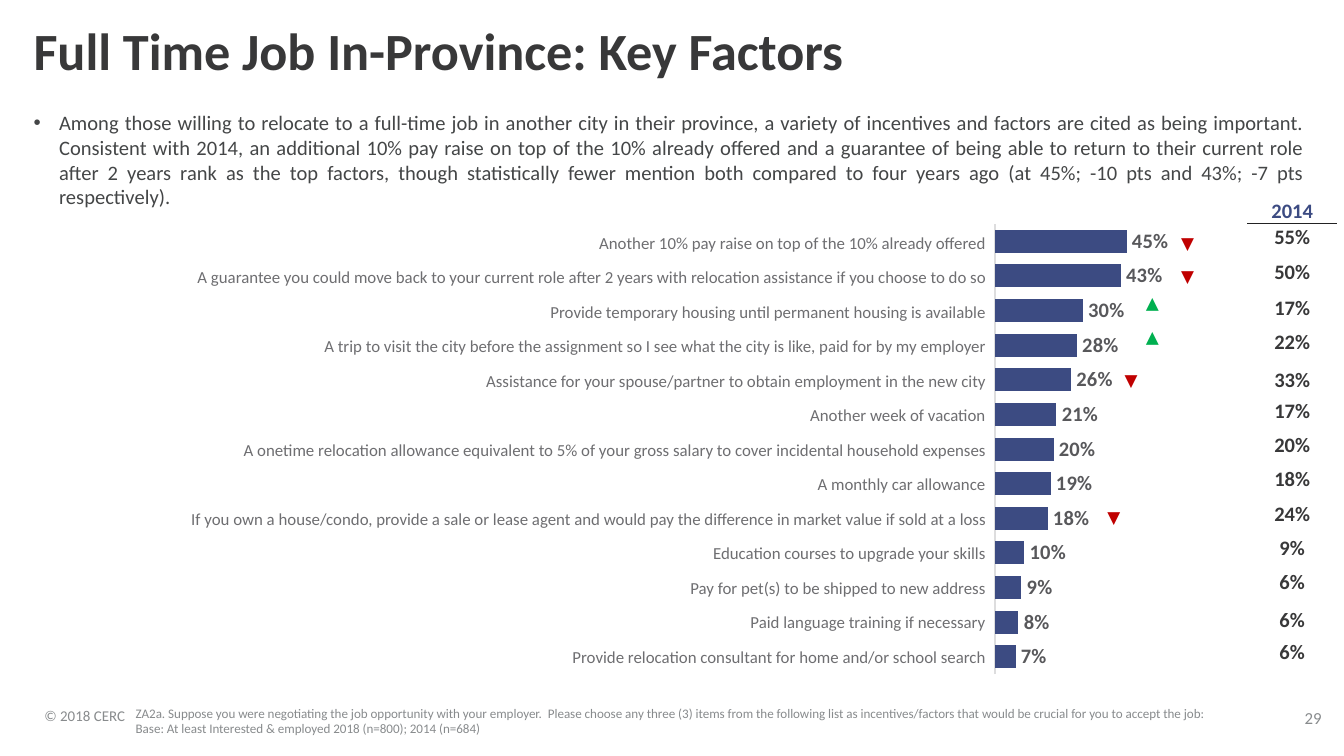
from lxml import etree
from pptx import Presentation
from pptx.chart.data import CategoryChartData
from pptx.dml.color import RGBColor
from pptx.enum.chart import XL_CHART_TYPE, XL_LABEL_POSITION, XL_TICK_LABEL_POSITION, XL_TICK_MARK
from pptx.enum.text import MSO_ANCHOR, PP_ALIGN
from pptx.oxml import parse_xml
from pptx.oxml.ns import nsdecls, qn
from pptx.util import Inches, Pt

FONT = "Calibri"
NAVY = RGBColor(0x3C, 0x4B, 0x82)
INK = RGBColor(0x38, 0x38, 0x39)
RULE = RGBColor(0x22, 0x22, 0x23)
BODY = RGBColor(0x44, 0x46, 0x47)
LABEL = RGBColor(0x6E, 0x6E, 0x71)
VALUE = RGBColor(0x58, 0x58, 0x5B)
FOOT = RGBColor(0x88, 0x8B, 0x8D)
AXIS = RGBColor(0xDD, 0xDD, 0xDE)
RED = RGBColor(0xC0, 0x00, 0x00)
GREEN = RGBColor(0x00, 0xB0, 0x50)
NO_STYLE = "{2D5ABB26-0587-4C30-8999-92F81FD0307C}"

# factor, share in 2018, share in 2014
FACTORS = [
    ("Another 10% pay raise on top of the 10% already offered", 0.45, "55%"),
    ("A guarantee you could move back to your current role after 2 years with relocation "
     "assistance if you choose to do so", 0.43, "50%"),
    ("Provide temporary housing until permanent housing is available", 0.30, "17%"),
    ("A trip to visit the city before the assignment so I see what the city is like, "
     "paid for by my employer", 0.28, "22%"),
    ("Assistance for your spouse/partner to obtain employment in the new city", 0.26, "33%"),
    ("Another week of vacation", 0.21, "17%"),
    ("A onetime relocation allowance equivalent to 5% of your gross salary to cover "
     "incidental household expenses", 0.20, "20%"),
    ("A monthly car allowance", 0.19, "18%"),
    ("If you own a house/condo, provide a sale or lease agent and would pay the difference "
     "in market value if sold at a loss", 0.18, "24%"),
    ("Education courses to upgrade your skills", 0.10, "9%"),
    ("Pay for pet(s) to be shipped to new address", 0.09, "6%"),
    ("Paid language training if necessary", 0.08, "6%"),
    ("Provide relocation consultant for home and/or school search", 0.07, "6%"),
]
ROWS_2014 = [0.18, 0.19, 0.33, 0.19, 0.33, 0.23, 0.23, 0.28, 0.23, 0.28, 0.23, 0.28, 0.28, 0.19]
FALLS = [(8.69, 1.68), (8.69, 1.93), (8.27, 2.70), (8.14, 3.72)]
RISES = [(8.40, 2.16), (8.40, 2.41)]

SUMMARY = (
    "Among those willing to relocate to a full-time job in another city in their province, "
    "a variety of incentives and factors are cited as being important. Consistent with 2014, "
    "an additional 10% pay raise on top of the 10% already offered and a guarantee of being "
    "able to return to their current role after 2 years rank as the top factors, though "
    "statistically fewer mention both compared to four years ago (at 45%; -10 pts and 43%; "
    "-7 pts respectively).")
FOOTNOTE = (
    "ZA2a. Suppose you were negotiating the job opportunity with your employer.  Please choose "
    "any three (3) items from the following list as incentives/factors that would be crucial "
    "for you to accept the job: Base: At least Interested & employed 2018 (n=800); 2014 (n=684)")


def style_font(font, size, color, bold=False):
    font.name, font.size, font.bold = FONT, Pt(size), bold
    font.color.rgb = color


def add_text(s, box, text, size, color, bold=False, align=PP_ALIGN.LEFT,
             anchor=MSO_ANCHOR.TOP, wrap=True, inset=(0, 0), spacing=1.0):
    """Add a one-paragraph text box; inset is (horizontal, vertical) in inches."""
    sp = s.shapes.add_textbox(*map(Inches, box))
    tf = sp.text_frame
    tf.word_wrap, tf.vertical_anchor = wrap, anchor
    tf.margin_left = tf.margin_right = Inches(inset[0])
    tf.margin_top = tf.margin_bottom = Inches(inset[1])
    p = tf.paragraphs[0]
    p.alignment, p.line_spacing = align, spacing
    r = p.add_run()
    r.text = text
    style_font(r.font, size, color, bold)
    return sp


def add_summary(s, box):
    sp = add_text(s, box, SUMMARY, 11, BODY, align=PP_ALIGN.JUSTIFY)
    pPr = sp.text_frame.paragraphs[0]._p.get_or_add_pPr()
    pPr.set("marL", str(Inches(0.19)))
    pPr.set("indent", str(-Inches(0.19)))
    etree.SubElement(pPr, qn("a:buFont")).set("typeface", "Arial")
    etree.SubElement(pPr, qn("a:buChar")).set("char", "•")


def add_column(s, box, heights, texts, size, color, align, bold=False):
    """Add a one-column table without style or fill."""
    tbl = s.shapes.add_table(len(texts), 1, *map(Inches, box)).table
    tbl.first_row = tbl.horz_banding = False
    tbl._tbl.tblPr.find(qn("a:tableStyleId")).text = NO_STYLE
    for row, height, text in zip(tbl.rows, heights, texts):
        row.height = Inches(height)
        cell = row.cells[0]
        cell.fill.background()
        cell.vertical_anchor = MSO_ANCHOR.MIDDLE
        cell.margin_left = cell.margin_right = cell.margin_top = Inches(0.01)
        cell.margin_bottom = 0
        p = cell.text_frame.paragraphs[0]
        p.alignment = align
        r = p.add_run()
        r.text = text
        style_font(r.font, size, color, bold)
    return tbl


def set_borders(cell, ruled):
    """Rule the named edge of a cell and clear its other edges."""
    tcPr = cell._tc.get_or_add_tcPr()
    for i, edge in enumerate(("lnL", "lnR", "lnT", "lnB")):
        paint = "<a:noFill/>"
        if edge == ruled:
            paint = f'<a:solidFill><a:srgbClr val="{RULE}"/></a:solidFill>'
        tcPr.insert(i, parse_xml(
            f'<a:{edge} {nsdecls("a")} w="{Pt(0.5)}">{paint}</a:{edge}>'))


def add_2014_column(s, box):
    texts = ["2014"] + [past for _, _, past in FACTORS]
    tbl = add_column(s, box, ROWS_2014, texts, 11, INK, PP_ALIGN.CENTER, bold=True)
    head = tbl.cell(0, 0)
    head.margin_left = head.margin_right = head.margin_top = 0
    head.text_frame.paragraphs[0].runs[0].font.color.rgb = NAVY
    for i, row in enumerate(tbl.rows):
        set_borders(row.cells[0], {0: "lnB", 1: "lnT"}.get(i))


def add_factor_chart(s, box):
    data = CategoryChartData(number_format="0%")
    data.categories = [str(i + 1) for i in range(len(FACTORS))]
    data.add_series("Series 1", [share for _, share, _ in FACTORS])
    chart = s.shapes.add_chart(XL_CHART_TYPE.BAR_CLUSTERED, *map(Inches, box), data).chart
    chart.has_legend = chart.has_title = False
    style_font(chart.font, 10, RULE)

    cat = chart.category_axis
    cat.reverse_order = True
    cat.tick_label_position = XL_TICK_LABEL_POSITION.NONE
    cat.major_tick_mark = cat.minor_tick_mark = XL_TICK_MARK.NONE
    cat.format.line.color.rgb = AXIS
    cat.format.line.width = Pt(0.75)
    val = chart.value_axis
    val.minimum_scale, val.maximum_scale = 0, 1
    val.has_major_gridlines = val.visible = False

    plot = chart.plots[0]
    plot.gap_width, plot.vary_by_categories = 50, False
    fill = plot.series[0].format.fill
    fill.solid()
    fill.fore_color.rgb = NAVY
    labels = plot.series[0].data_labels
    labels.show_value = True
    labels.position = XL_LABEL_POSITION.OUTSIDE_END
    labels.number_format, labels.number_format_is_linked = "0%", False
    style_font(labels.font, 11, VALUE, bold=True)

    area = chart._chartSpace.chart.plotArea
    for old in area.findall(qn("c:layout")):
        area.remove(old)
    sizes = "".join(f'<c:{k} val="{v}"/>' for k, v in
                    (("x", 0.054), ("y", 0.029), ("w", 0.946), ("h", 0.903)))
    area.insert(0, parse_xml(
        f'<c:layout {nsdecls("c")}><c:manualLayout><c:layoutTarget val="inner"/>'
        f'<c:xMode val="edge"/><c:yMode val="edge"/>{sizes}</c:manualLayout></c:layout>'))


def add_trend_marks(s, places, color, rotation=0):
    for x, y in places:
        sp = add_text(s, (x, y, 0.32, 0.25), "▼", 9, color, wrap=False, inset=(0.1, 0.05))
        sp.rotation = rotation


def add_footer(s):
    add_text(s, (0.33, 5.21, 0.76, 0.18), "© 2018 CERC", 8, FOOT,
             anchor=MSO_ANCHOR.BOTTOM, wrap=False, spacing=0.85)
    add_text(s, (9.63, 5.29, 0.28, 0.13), "29", 9, FOOT, align=PP_ALIGN.CENTER,
             anchor=MSO_ANCHOR.BOTTOM, wrap=False, spacing=0.85)
    add_text(s, (1.01, 5.24, 8.16, 0.24), FOOTNOTE, 7, FOOT, anchor=MSO_ANCHOR.BOTTOM)


def main():
    prs = Presentation()
    prs.slide_width = Inches(10)
    prs.slide_height = prs.slide_width * 9 // 16
    s = prs.slides.add_slide(prs.slide_layouts[6])
    add_footer(s)
    add_text(s, (0.25, 0.19, 8.76, 0.42), "Full Time Job In-Province: Key Factors",
             28, INK, bold=True, spacing=0.9)
    add_summary(s, (0.25, 0.82, 9.46, 0.52))
    add_factor_chart(s, (7.28, 1.56, 2.3, 3.71))
    add_2014_column(s, (9.28, 1.48, 0.67, 3.47))
    height = 3.34
    add_column(s, (0.06, 1.68, 7.28, height), [height / len(FACTORS)] * len(FACTORS),
               [name for name, _, _ in FACTORS], 9, LABEL, PP_ALIGN.RIGHT)
    add_trend_marks(s, FALLS, RED)
    add_trend_marks(s, RISES, GREEN, rotation=180)
    prs.save("out.pptx")


if __name__ == "__main__":
    main()
